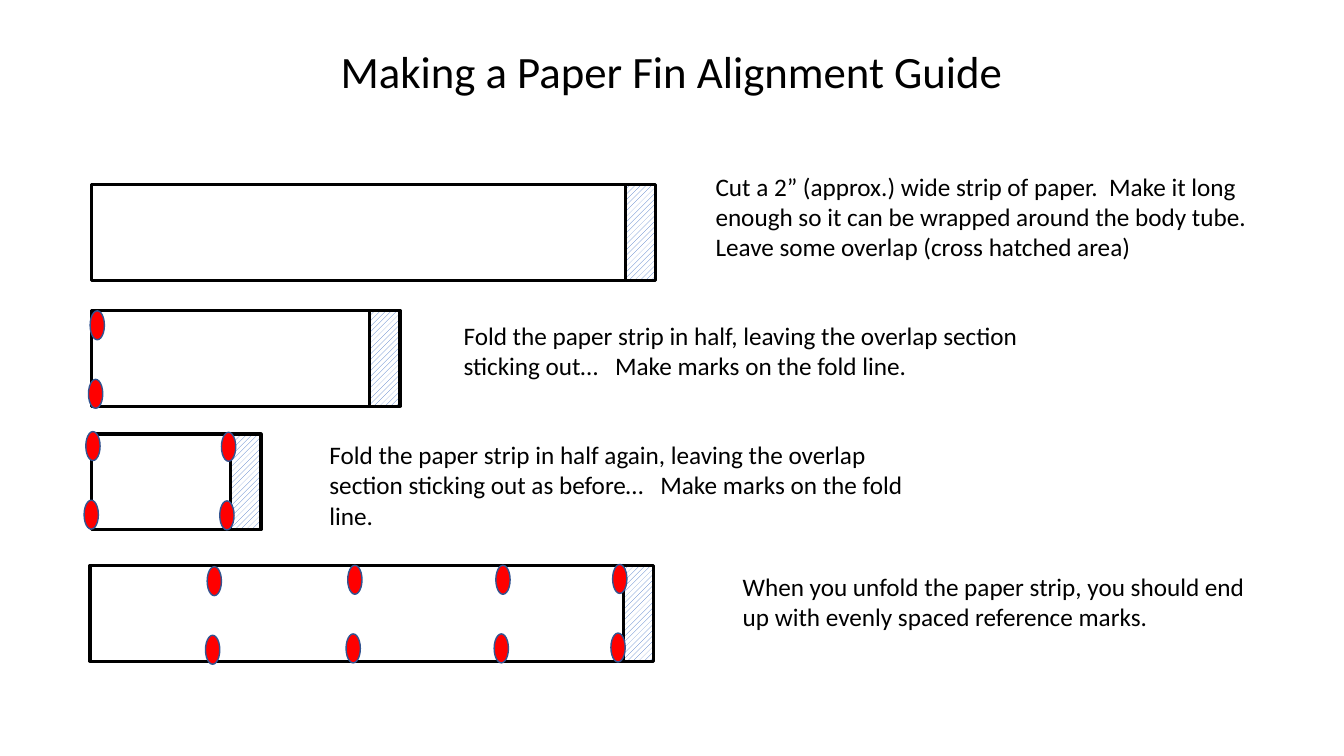
"""Build the slide on making a paper fin alignment guide."""
from pptx import Presentation
from pptx.dml.color import RGBColor
from pptx.enum.dml import MSO_PATTERN as Pattern
from pptx.enum.shapes import MSO_SHAPE as Shape
from pptx.enum.text import MSO_ANCHOR as Anchor, MSO_AUTO_SIZE as AutoSize, PP_ALIGN as Align
from pptx.util import Pt

COLORS = {"ink": "000000", "paper": "FFFFFF", "hatch": "4472C4", "mark": "FF0000", "rim": "325491"}
COLORS = {name: RGBColor.from_string(value) for name, value in COLORS.items()}
STRIP_HEIGHT, OVERLAP = 68.4, 21.6
MARK_WIDTH, MARK_HEIGHT = 10.2, 20.7
MARK_SHIFT, MARK_DROP = -1.2, 49

STEPS = [
    {"strip": (65.5, 131.8, 381), "marks": [], "caption": (504, 118.8, 402.5, 72.7),
     "text": "Cut a 2” (approx.) wide strip of paper.  Make it long enough so it can be wrapped "
             "around the body tube.  Leave some overlap (cross hatched area)"},
    {"strip": (65.5, 221.8, 198.7), "marks": [(64.4, 222)], "caption": (324, 225.4, 433.4, 51.1),
     "text": "Fold the paper strip in half, leaving the overlap section sticking out…   "
             "Make marks on the fold line."},
    {"strip": (65.5, 310, 99.4), "marks": [(61.3, 308.3), (158.2, 308.8)],
     "caption": (228.2, 310.3, 433.4, 72.7),
     "text": "Fold the paper strip in half again, leaving the overlap section sticking out as "
             "before…   Make marks on the fold line."},
    {"strip": (64.3, 403.9, 381),
     "marks": [(148, 404.8), (248.4, 403.8), (354.2, 403.8), (437.6, 403.2)],
     "caption": (523.4, 404.6, 383, 51.1),
     "text": "When you unfold the paper strip, you should end up with evenly spaced reference marks."},
]


def add_outline(kind, place, fill, line, weight):
    shape = page.shapes.add_shape(kind, *map(Pt, place))
    shape.shadow.inherit = False
    if fill == "hatch":
        shape.fill.patterned()
        shape.fill.pattern = Pattern.WIDE_UPWARD_DIAGONAL
        shape.fill.fore_color.rgb = COLORS["hatch"]
        shape.fill.back_color.rgb = COLORS["paper"]
    else:
        shape.fill.solid()
        shape.fill.fore_color.rgb = COLORS[fill]
    shape.line.color.rgb = COLORS[line]
    shape.line.width = Pt(weight)


def write_text(box, place, text, size, align):
    box.left, box.top, box.width, box.height = map(Pt, place)
    frame = box.text_frame
    frame.text = text
    layout = {"word_wrap": True, "auto_size": AutoSize.NONE, "vertical_anchor": Anchor.TOP}
    for name, value in layout.items():
        setattr(frame, name, value)
    para = frame.paragraphs[0]
    para.alignment = align
    span = para.runs[0]
    for name, value in {"name": "Calibri", "size": Pt(size)}.items():
        setattr(span.font, name, value)
    span.font.color.rgb = COLORS["ink"]


deck = Presentation()
deck.slide_width, deck.slide_height = Pt(960), Pt(540)
page = deck.slides.add_slide(deck.slide_layouts[5])

write_text(page.shapes.title, (147.6, 27.4, 664.6, 46),
           "Making a Paper Fin Alignment Guide", 32, Align.CENTER)

for step in STEPS:
    left, top, length = step["strip"]
    add_outline(Shape.RECTANGLE, (left + length, top, OVERLAP, STRIP_HEIGHT), "hatch", "ink", 2.25)
    add_outline(Shape.RECTANGLE, (left, top, length, STRIP_HEIGHT), "paper", "ink", 2.25)
    for x, y in step["marks"]:
        for row in range(2):
            place = (x + row * MARK_SHIFT, y + row * MARK_DROP, MARK_WIDTH, MARK_HEIGHT)
            add_outline(Shape.OVAL, place, "mark", "rim", 1)
    caption = page.shapes.add_textbox(0, 0, 0, 0)
    write_text(caption, step["caption"], step["text"], 18, Align.LEFT)

deck.save("out.pptx")
